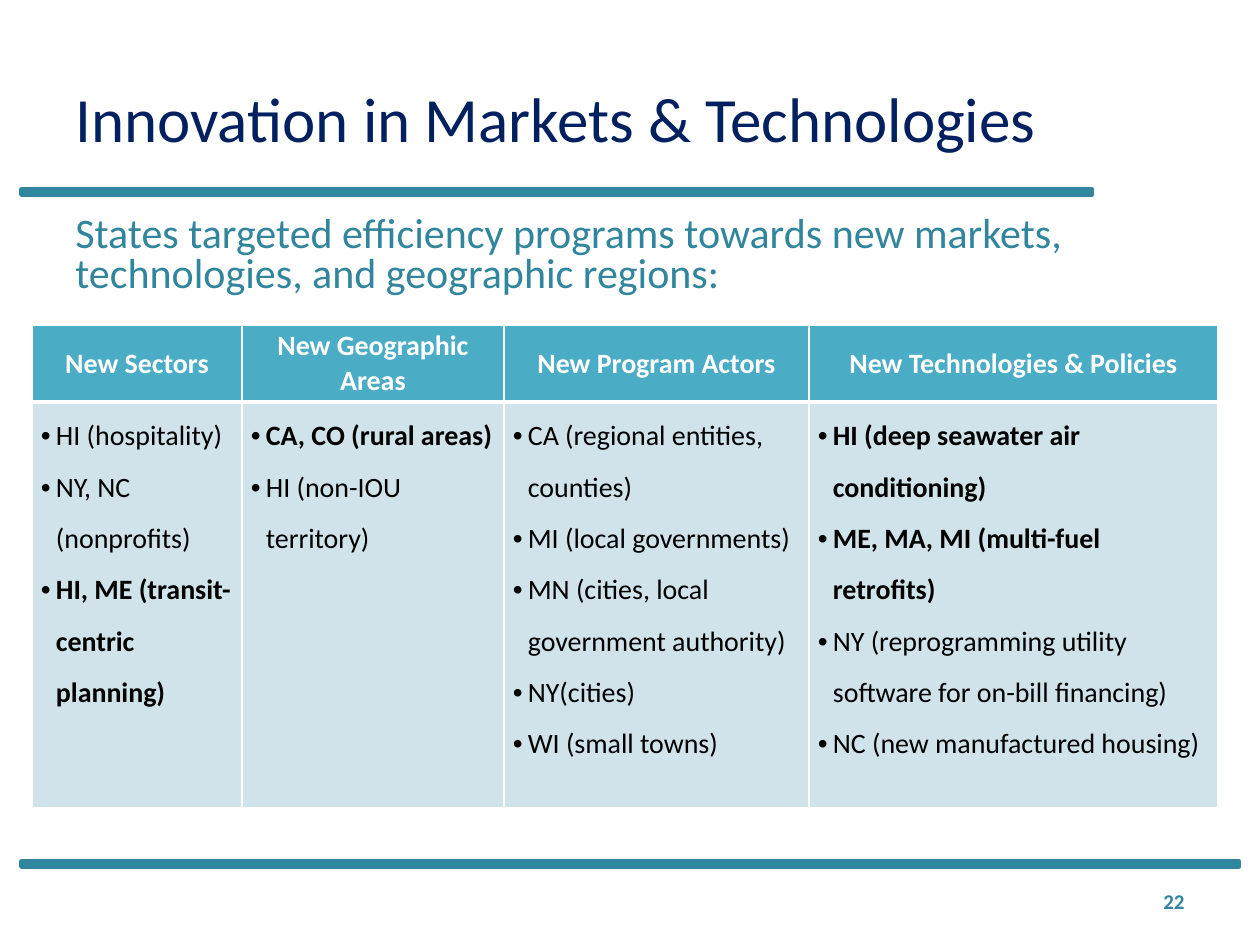
from dataclasses import dataclass

from lxml.etree import SubElement
from pptx import Presentation
from pptx.dml.color import RGBColor
from pptx.enum.shapes import MSO_SHAPE
from pptx.enum.text import MSO_ANCHOR, PP_ALIGN
from pptx.oxml.ns import qn
from pptx.util import Emu, Pt

EMU_PER_PX = 914400 / 126
FONT = "Calibri"
WHITE = RGBColor(0xFF, 0xFF, 0xFF)
BLACK = RGBColor(0x00, 0x00, 0x00)
NAVY = RGBColor(0x00, 0x20, 0x60)
TEAL = RGBColor(0x31, 0x85, 0x9C)
HEADER_FILL = RGBColor(0x4B, 0xAC, 0xC6)
BODY_FILL = RGBColor(0xD0, 0xE3, 0xEA)


@dataclass
class Item:
    text: str
    bold: bool = False


@dataclass
class Column:
    heading: str
    width: int
    items: list[Item]


@dataclass
class Area:
    left: int
    top: int
    width: int
    height: int


COLUMNS = [
    Column("New Sectors", 210, [
        Item("HI (hospitality)"),
        Item("NY, NC (nonprofits)"),
        Item("HI, ME (transit-centric planning)", bold=True),
    ]),
    Column("New Geographic Areas", 262, [
        Item("CA, CO (rural areas)", bold=True),
        Item("HI (non-IOU territory)"),
    ]),
    Column("New Program Actors", 305, [
        Item("CA (regional entities, counties)"),
        Item("MI (local governments)"),
        Item("MN (cities, local government authority)"),
        Item("NY(cities)"),
        Item("WI (small towns)"),
    ]),
    Column("New Technologies & Policies", 409, [
        Item("HI (deep seawater air conditioning)", bold=True),
        Item("ME, MA, MI (multi-fuel retrofits)", bold=True),
        Item("NY (reprogramming utility software for on-bill financing)"),
        Item("NC (new manufactured housing)"),
    ]),
]
ROW_HEIGHTS = [77, 406]
RULES = [Area(21, 189, 1071, 6), Area(21, 861, 1218, 6)]


def px(length: int) -> Emu:
    return Emu(round(length * EMU_PER_PX))


def place(area: Area) -> tuple:
    return px(area.left), px(area.top), px(area.width), px(area.height)


def write(para, text: str, *, size: int, color: RGBColor, bold=False,
          align=PP_ALIGN.LEFT, line_spacing=None, space_after=None) -> None:
    para.alignment = align
    if line_spacing is not None:
        para.line_spacing = line_spacing
    if space_after is not None:
        para.space_after = Pt(space_after)
    span = para.add_run()
    span.text = text
    span.font.name = FONT
    span.font.size = Pt(size)
    span.font.bold = bold
    span.font.color.rgb = color


def add_text(page, area: Area, text: str, *, anchor=MSO_ANCHOR.TOP, **style) -> None:
    frame = page.shapes.add_textbox(*place(area)).text_frame
    frame.word_wrap = True
    frame.vertical_anchor = anchor
    write(frame.paragraphs[0], text, **style)


def add_rule(page, area: Area) -> None:
    rule = page.shapes.add_shape(MSO_SHAPE.RECTANGLE, *place(area))
    rule.shadow.inherit = False
    rule.fill.solid()
    rule.fill.fore_color.rgb = TEAL
    rule.line.color.rgb = TEAL
    rule.line.width = Pt(2)


def add_bullet(para) -> None:
    properties = para._p.get_or_add_pPr()
    properties.set("marL", str(px(15)))
    properties.set("indent", str(-px(15)))
    SubElement(properties, qn("a:buFont"), typeface="Arial")
    SubElement(properties, qn("a:buChar"), char="•")


def style_cell(cell, fill: RGBColor, top_width: int, bottom_width: int) -> None:
    cell.margin_left = cell.margin_right = px(9)
    cell.margin_top = cell.margin_bottom = 0
    properties = cell._tc.get_or_add_tcPr()
    widths = {"a:lnL": 1, "a:lnR": 1, "a:lnT": top_width, "a:lnB": bottom_width}
    for side, width in widths.items():
        line = SubElement(properties, qn(side), w=str(Pt(width)))
        SubElement(SubElement(line, qn("a:solidFill")), qn("a:srgbClr"), val=str(WHITE))
    cell.fill.solid()
    cell.fill.fore_color.rgb = fill


def add_state_table(page, left: int, top: int) -> None:
    area = Area(left, top, sum(column.width for column in COLUMNS), sum(ROW_HEIGHTS))
    table = page.shapes.add_table(len(ROW_HEIGHTS), len(COLUMNS), *place(area)).table
    for row, height in zip(table.rows, ROW_HEIGHTS):
        row.height = px(height)
    for index, column in enumerate(COLUMNS):
        table.columns[index].width = px(column.width)
        header, body = table.cell(0, index), table.cell(1, index)
        style_cell(header, HEADER_FILL, 1, 3)
        header.vertical_anchor = MSO_ANCHOR.MIDDLE
        write(header.text_frame.paragraphs[0], column.heading, size=16, color=WHITE,
              bold=True, align=PP_ALIGN.CENTER)
        style_cell(body, BODY_FILL, 3, 1)
        frame = body.text_frame
        for position, item in enumerate(column.items):
            para = frame.add_paragraph() if position else frame.paragraphs[0]
            add_bullet(para)
            write(para, item.text, size=16, color=BLACK, bold=item.bold, line_spacing=1.5)


def main() -> None:
    deck = Presentation()
    deck.slide_width, deck.slide_height = px(1260), px(945)
    page = deck.slides.add_slide(deck.slide_layouts[6])
    for rule in RULES:
        add_rule(page, rule)
    add_text(page, Area(63, 38, 1134, 158), "Innovation in Markets & Technologies",
             size=36, color=NAVY, anchor=MSO_ANCHOR.MIDDLE)
    add_state_table(page, 32, 325)
    add_text(page, Area(903, 876, 294, 50), "22", size=12, color=TEAL, bold=True,
             align=PP_ALIGN.RIGHT, anchor=MSO_ANCHOR.MIDDLE)
    add_text(page, Area(63, 210, 1134, 158),
             "States targeted efficiency programs towards new markets, "
             "technologies, and geographic regions:",
             size=24, color=TEAL, line_spacing=0.8, space_after=12)
    deck.save("out.pptx")


if __name__ == "__main__":
    main()
